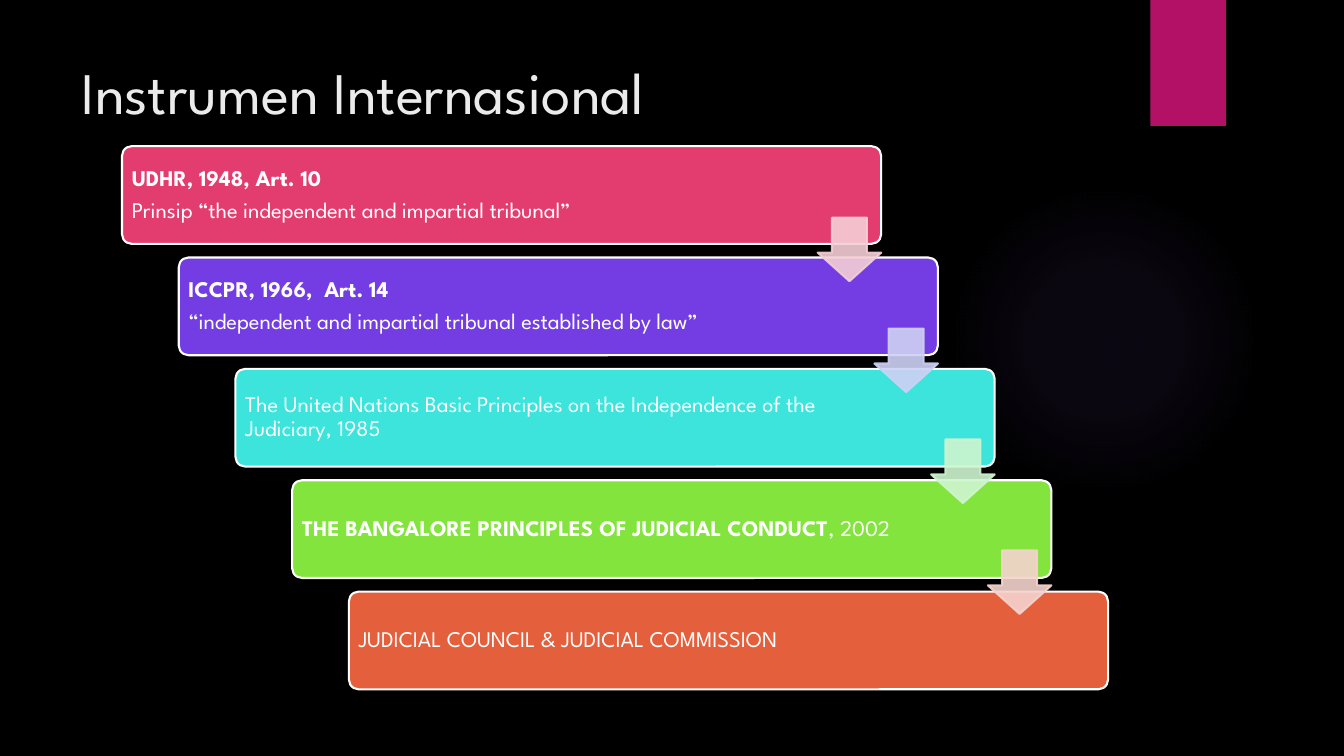
from pptx import Presentation
from pptx import util as u
from pptx.dml.color import RGBColor
from pptx.enum import shapes, text
from pptx.oxml import parse_xml
from pptx.oxml.ns import nsdecls, qn

BLACK = RGBColor(0x00, 0x00, 0x00)
WHITE = RGBColor(0xFF, 0xFF, 0xFF)
TITLE_GREY = RGBColor(0xEB, 0xEB, 0xEB)
MAGENTA = RGBColor(0xB3, 0x11, 0x66)
GLOW = RGBColor(0x9B, 0x6B, 0xF2)
ROSE = RGBColor(0xE3, 0x3D, 0x6F)
VIOLET = RGBColor(0x73, 0x3D, 0xE3)
AQUA = RGBColor(0x3C, 0xE4, 0xDC)
LIME = RGBColor(0x82, 0xE4, 0x3C)
ORANGE = RGBColor(0xE4, 0x5F, 0x3C)
PALE_ROSE = RGBColor(0xF4, 0xCE, 0xD5)
PALE_VIOLET = RGBColor(0xCE, 0xD1, 0xF4)
PALE_GREEN = RGBColor(0xCE, 0xF5, 0xCF)
PALE_ORANGE = RGBColor(0xF5, 0xD3, 0xCE)

INSTRUMENTS = [
    (ROSE, PALE_ROSE, 47.86, [
        [("UDHR, 1948, Art. 10", True)],
        [("Prinsip “the independent and impartial tribunal”", False)]]),
    (VIOLET, PALE_VIOLET, 47.19, [
        [("ICCPR, 1966,  Art. 14", True)],
        [("“independent and impartial tribunal established by law”", False)]]),
    (AQUA, PALE_GREEN, 47.19, [
        [("The United Nations Basic Principles on the Independence of the "
          "Judiciary, 1985", False)]]),
    (LIME, PALE_ORANGE, 47.19, [
        [("THE BANGALORE PRINCIPLES OF JUDICIAL CONDUCT", True), (", 2002", False)]]),
    (ORANGE, None, 47.19, [
        [("JUDICIAL COUNCIL & JUDICIAL COMMISSION", False)]]),
]


def apply(target, values):
    for name, value in values.items():
        setattr(target, name, value)


class SlideBuilder:
    font = "League Spartan"
    inset = u.Inches(0.07)
    outline = u.Pt(1.5)

    def __init__(self, deck):
        self.deck = deck
        self.page = deck.slides.add_slide(deck.slide_layouts[5])
        background = self.page.background.fill
        background.solid()
        background.fore_color.rgb = BLACK

    def place(self, left, top, width, height):
        across, down = self.deck.slide_width / 100, self.deck.slide_height / 100
        return [int(left * across), int(top * down), int(width * across), int(height * down)]

    def add_span(self, para, content, size, color, bold):
        span = para.add_run()
        span.text = content
        apply(span.font, {"name": self.font, "size": u.Pt(size), "bold": bold})
        span.font.color.rgb = color

    def title(self, content, *area):
        box = self.page.shapes.title
        apply(box, dict(zip(("left", "top", "width", "height"), self.place(*area))))
        apply(box.text_frame, {"vertical_anchor": text.MSO_ANCHOR.TOP, "word_wrap": True})
        para = box.text_frame.paragraphs[0]
        para.alignment = text.PP_ALIGN.LEFT
        self.add_span(para, content, 42, TITLE_GREY, False)

    def shape(self, kind, area, fill=None, line=None, adjustments=(), opacity=None):
        box = self.page.shapes.add_shape(kind, *self.place(*area))
        box.shadow.inherit = False
        for index, value in enumerate(adjustments):
            box.adjustments[index] = value
        if fill is not None:
            box.fill.solid()
            box.fill.fore_color.rgb = fill
        if line is None:
            box.line.fill.background()
        else:
            box.line.color.rgb = line
            box.line.width = self.outline
        if opacity is not None:
            for color in box._element.spPr.iter(qn("a:srgbClr")):
                color.append(parse_xml(f'<a:alpha {nsdecls("a")} val="{opacity * 1000}"/>'))
        return box

    def glow(self, color, stops, *area):
        box = self.shape(shapes.MSO_SHAPE.OVAL, area)
        marks = "".join(
            f'<a:gs pos="{position * 1000}"><a:srgbClr val="{color}">'
            f'<a:alpha val="{opacity * 1000}"/></a:srgbClr></a:gs>'
            for position, opacity in stops)
        gradient = parse_xml(
            f'<a:gradFill {nsdecls("a")}><a:gsLst>{marks}</a:gsLst><a:path path="circle">'
            '<a:fillToRect l="50000" t="50000" r="50000" b="50000"/></a:path></a:gradFill>')
        box._element.spPr.find(qn("a:prstGeom")).addnext(gradient)

    def caption(self, lines, *area):
        box = self.page.shapes.add_textbox(*self.place(*area))
        frame = box.text_frame
        apply(frame, {"word_wrap": True, "vertical_anchor": text.MSO_ANCHOR.MIDDLE})
        apply(frame, {f"margin_{side}": self.inset
                      for side in ("left", "right", "top", "bottom")})
        for index, spans in enumerate(lines):
            para = frame.add_paragraph() if index else frame.paragraphs[0]
            apply(para, {"line_spacing": 0.9, "space_after": u.Pt(5.6)})
            for content, bold in spans:
                self.add_span(para, content, 16, WHITE, bold)

    def card(self, step, color, caption_width, lines):
        left, top = 9.08 + 4.22 * step, 19.33 + 14.73 * step
        self.shape(shapes.MSO_SHAPE.ROUNDED_RECTANGLE, (left, top, 56.49, 12.93),
                   color, WHITE, [0.1])
        self.caption(lines, left + 0.2, top + 0.38, caption_width, 12.13)

    def arrow(self, step, color):
        area = 60.84 + 4.22 * step, 28.8 + 14.67 * step, 4.73, 8.4
        self.shape(shapes.MSO_SHAPE.DOWN_ARROW, area, color, color, [0.55, 0.45], 90)


def main():
    deck = Presentation()
    apply(deck, {"slide_width": u.Inches(13.33), "slide_height": u.Inches(7.5)})
    builder = SlideBuilder(deck)
    builder.glow(GLOW, [(0, 7), (36, 6), (69, 0)], 70.59, 24.4, 23.1, 41.07)
    builder.shape(shapes.MSO_SHAPE.RECTANGLE, (85.6, 0, 5.63, 16.67), MAGENTA)
    builder.title("Instrumen Internasional", 5.33, 6.67, 77.19, 20.4)
    for step, (color, _, caption_width, lines) in enumerate(INSTRUMENTS):
        builder.card(step, color, caption_width, lines)
    for step, (_, pale, _, _) in enumerate(INSTRUMENTS[:-1]):
        builder.arrow(step, pale)
    deck.save("out.pptx")


if __name__ == "__main__":
    main()
